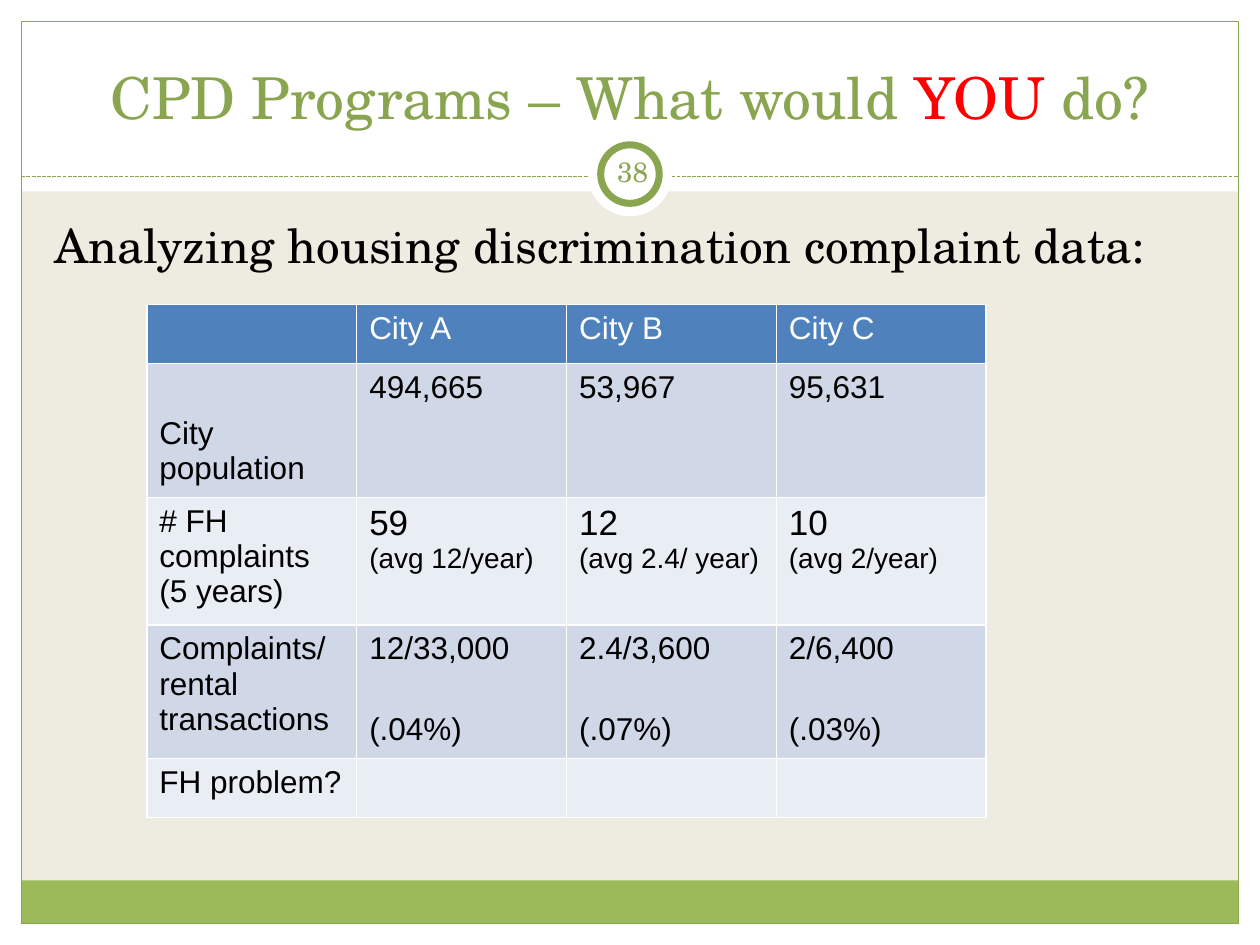
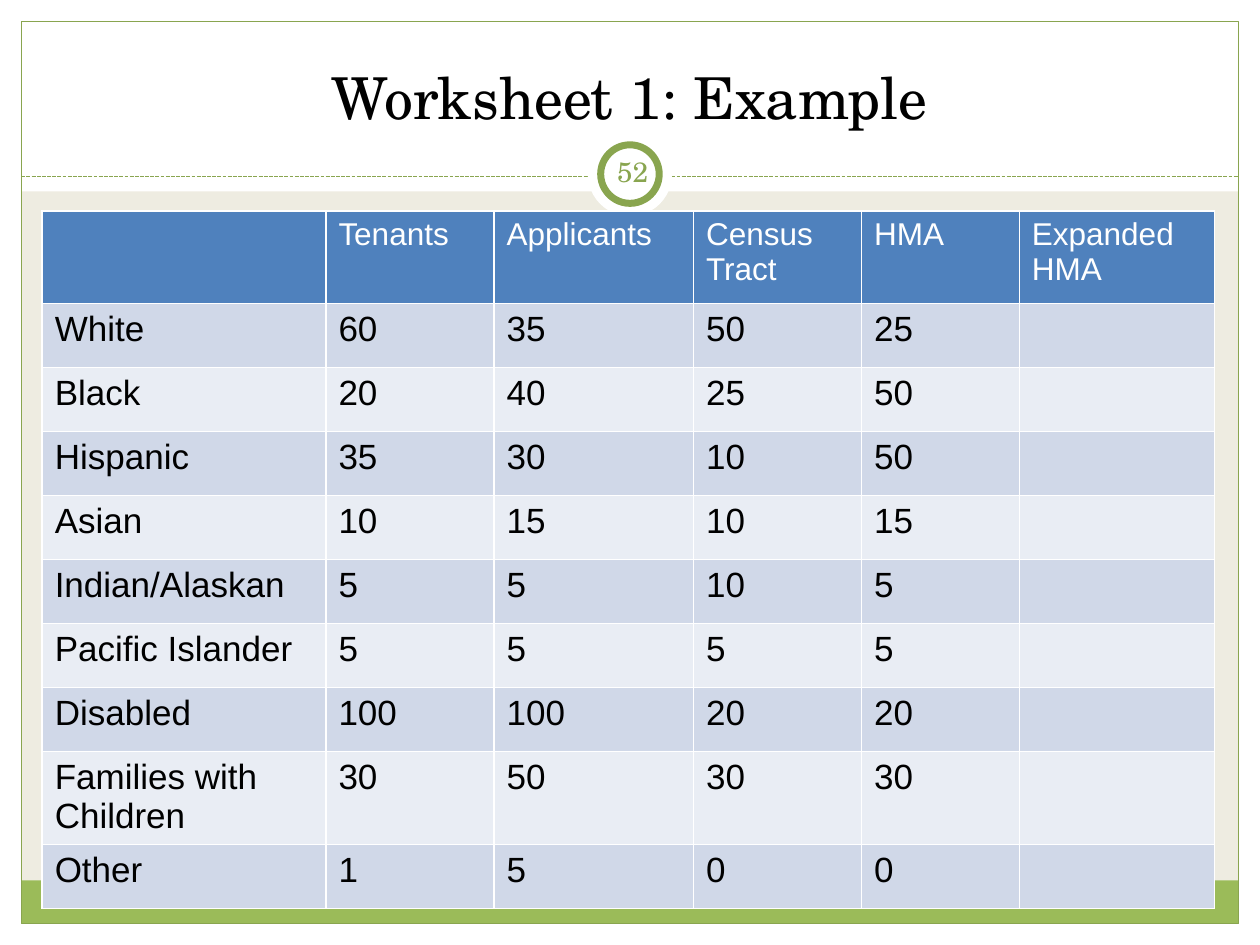
from lxml import etree
from pptx import Presentation
from pptx.dml.color import RGBColor
from pptx.enum import dml, shapes, text
from pptx.oxml import ns
from pptx.util import Cm, Pt

WHITE = RGBColor(0xFF, 0xFF, 0xFF)
BLACK = RGBColor(0, 0, 0)
RED = RGBColor(0xFF, 0, 0)
CREAM = RGBColor(0xEE, 0xEC, 0xE1)
LEAF = RGBColor(0x9B, 0xBB, 0x59)
OLIVE = RGBColor(0x89, 0xA5, 0x4F)
BLUE = RGBColor(0x4F, 0x81, 0xBD)
BANDS = RGBColor(0xD0, 0xD8, 0xE8), RGBColor(0xE9, 0xED, 0xF4)

SERIF = "TeX Gyre Schola"
SANS = "Arial"
PAGE_W, PAGE_H = 25.4, 19.05
EDGE = 0.43
LEFT = 0.85
RULE_Y = 3.56
BADGE_Y = 3.51
GAP = Pt(26)

CITIES = [
    ["", "City A", "City B", "City C"],
    ["City population", "494,665", "53,967", "95,631"],
    ["# FH complaints\n(5 years)", "59\n(avg 12/year)",
     "12\n(avg 2.4/ year)", "10\n(avg 2/year)"],
    ["Complaints/rental transactions", "12/33,000\n(.04%)",
     "2.4/3,600\n(.07%)", "2/6,400\n(.03%)"],
    ["FH problem?", "", "", ""],
]
GROUPS = [
    ["", "Tenants", "Applicants", "Census Tract", "HMA", "Expanded HMA"],
    ["White", "60", "35", "50", "25", ""],
    ["Black", "20", "40", "25", "50", ""],
    ["Hispanic", "35", "30", "10", "50", ""],
    ["Asian", "10", "15", "10", "15", ""],
    ["Indian/Alaskan", "5", "5", "10", "5", ""],
    ["Pacific Islander", "5", "5", "5", "5", ""],
    ["Disabled", "100", "100", "20", "20", ""],
    ["Families with Children", "30", "50", "30", "30", ""],
    ["Other", "1", "5", "0", "0", ""],
]


def style(font, size, color, name=SERIF):
    font.size, font.name, font.bold = Pt(size), name, False
    font.color.rgb = color


def add_form(slide, kind, box, fill=None, line=None, width=0.75):
    form = slide.shapes.add_shape(kind, *map(Cm, box))
    form.shadow.inherit = False
    if fill is None:
        form.fill.background()
    else:
        form.fill.solid()
        form.fill.fore_color.rgb = fill
    if line is None:
        form.line.fill.background()
    else:
        form.line.color.rgb = line
        form.line.width = Pt(width)


def add_text(slide, box, words, size, color, align):
    frame = slide.shapes.add_textbox(*map(Cm, box)).text_frame
    frame.word_wrap = True
    frame.text = words
    par = frame.paragraphs[0]
    par.alignment = align
    style(par.font, size, color)
    return frame


def add_frame(slide):
    """Draw the white margins, the green foot, the outline and the rule."""
    slide.background.fill.solid()
    slide.background.fill.fore_color.rgb = CREAM
    rect = shapes.MSO_SHAPE.RECTANGLE
    for box in ((0, PAGE_H - EDGE, PAGE_W, EDGE), (0, 0, PAGE_W, 3.86),
                (0, 0, EDGE, PAGE_H), (PAGE_W - EDGE, 0, EDGE, PAGE_H)):
        add_form(slide, rect, box, WHITE)
    inner = PAGE_W - 2 * EDGE
    add_form(slide, rect, (EDGE, 17.75, inner, 0.87), LEAF)
    add_form(slide, rect, (EDGE, EDGE, inner, PAGE_H - 2 * EDGE), line=OLIVE)
    rule = slide.shapes.add_connector(
        shapes.MSO_CONNECTOR.STRAIGHT,
        Cm(EDGE), Cm(RULE_Y), Cm(PAGE_W - EDGE), Cm(RULE_Y))
    rule.line.color.rgb = OLIVE
    rule.line.width = Pt(0.75)
    rule.line.dash_style = dml.MSO_LINE.SQUARE_DOT
    props = rule.element.find(ns.qn("p:spPr"))
    etree.SubElement(props, ns.qn("a:effectLst"))


def add_badge(slide, number, mid_x, mid_y):
    """Draw the ringed slide number around its centre."""
    for size, line in ((1.7, None), (1.18, OLIVE)):
        box = mid_x - size / 2, mid_y - size / 2, size, size
        add_form(slide, shapes.MSO_SHAPE.OVAL, box, WHITE, line, 4)
    box = mid_x - 0.58, mid_y - 0.66, 1.27, 1.22
    frame = add_text(slide, box, number, 16, OLIVE, text.PP_ALIGN.CENTER)
    frame.vertical_anchor = text.MSO_ANCHOR.MIDDLE
    frame.margin_left = frame.margin_right = Cm(0.13)
    frame.margin_top = frame.margin_bottom = Cm(0.13)


def set_title(slide, parts, color):
    """Fill the title with (words, own colour or None) and bring it forward."""
    title = slide.shapes.title
    title.left, title.top, title.width, title.height = map(
        Cm, (LEFT, 0.64, 23.7, 2.12))
    frame = title.text_frame
    frame.auto_size = text.MSO_AUTO_SIZE.NONE
    frame.vertical_anchor = text.MSO_ANCHOR.BOTTOM
    par = frame.paragraphs[0]
    par.alignment = text.PP_ALIGN.CENTER
    style(par.font, 33, color)
    for words, own in parts:
        run = par.add_run()
        run.text = words
        if own is not None:
            run.font.color.rgb = own
    title.element.getparent().append(title.element)


def add_borders(cell):
    props = cell._tc.get_or_add_tcPr()
    for spot, side in enumerate("LRTB"):
        line = etree.Element(ns.qn(f"a:ln{side}"), w=str(Pt(1)))
        fill = etree.SubElement(line, ns.qn("a:solidFill"))
        etree.SubElement(fill, ns.qn("a:srgbClr"), val=str(WHITE))
        props.insert(spot, line)


def add_grid(slide, left, top, widths, heights, rows, size):
    """Add a banded table with a blue header row and return it."""
    box = left, top, sum(widths), sum(heights)
    table = slide.shapes.add_table(
        len(rows), len(widths), *map(Cm, box)).table
    for col, width in zip(table.columns, widths):
        col.width = Cm(width)
    for r, (height, row) in enumerate(zip(heights, rows)):
        table.rows[r].height = Cm(height)
        for c, words in enumerate(row):
            cell = table.cell(r, c)
            cell.text = words
            cell.fill.solid()
            cell.fill.fore_color.rgb = BANDS[(r - 1) % 2] if r else BLUE
            add_borders(cell)
            for par in cell.text_frame.paragraphs:
                style(par.font, size if r else 18,
                      BLACK if r else WHITE, SANS)
    return table


def new_slide(deck, number, parts, color):
    slide = deck.slides.add_slide(deck.slide_layouts[5])
    add_frame(slide)
    add_badge(slide, number, PAGE_W / 2, BADGE_Y)
    set_title(slide, parts, color)
    return slide


def add_cities(deck):
    parts = [("CPD Programs – What would ", None), ("YOU", RED),
             (" do?", None)]
    slide = new_slide(deck, "38", parts, OLIVE)
    lead = add_text(slide, (LEFT, 4.24, 23.62, 1.6),
                    "Analyzing housing discrimination complaint data:",
                    27, BLACK, text.PP_ALIGN.JUSTIFY)
    lead.paragraphs[0].space_before = Pt(5.4)
    table = add_grid(slide, 2.96, 6.14, [4.23] * 4,
                     [1.19, 2.6, 2.57, 2.61, 1.18], CITIES, 18)
    table.cell(1, 0).margin_top = Cm(0.13) + GAP
    for c in range(1, 4):
        count, rate = table.cell(2, c).text_frame.paragraphs
        count.font.size, rate.font.size = Pt(20), Pt(16)
        table.cell(3, c).text_frame.paragraphs[1].space_before = GAP


def add_groups(deck):
    slide = new_slide(deck, "52", [("Worksheet 1: Example", None)], BLACK)
    tall, low = 1.87, 1.29
    add_grid(slide, LEFT, 4.25, [5.72, 3.39, 4.02, 3.39, 3.18, 3.93],
             [tall, *[low] * 7, tall, low], GROUPS, 20)


def main():
    deck = Presentation()
    deck.slide_width, deck.slide_height = Cm(PAGE_W), Cm(PAGE_H)
    add_cities(deck)
    add_groups(deck)
    deck.save("out.pptx")


if __name__ == "__main__":
    main()
